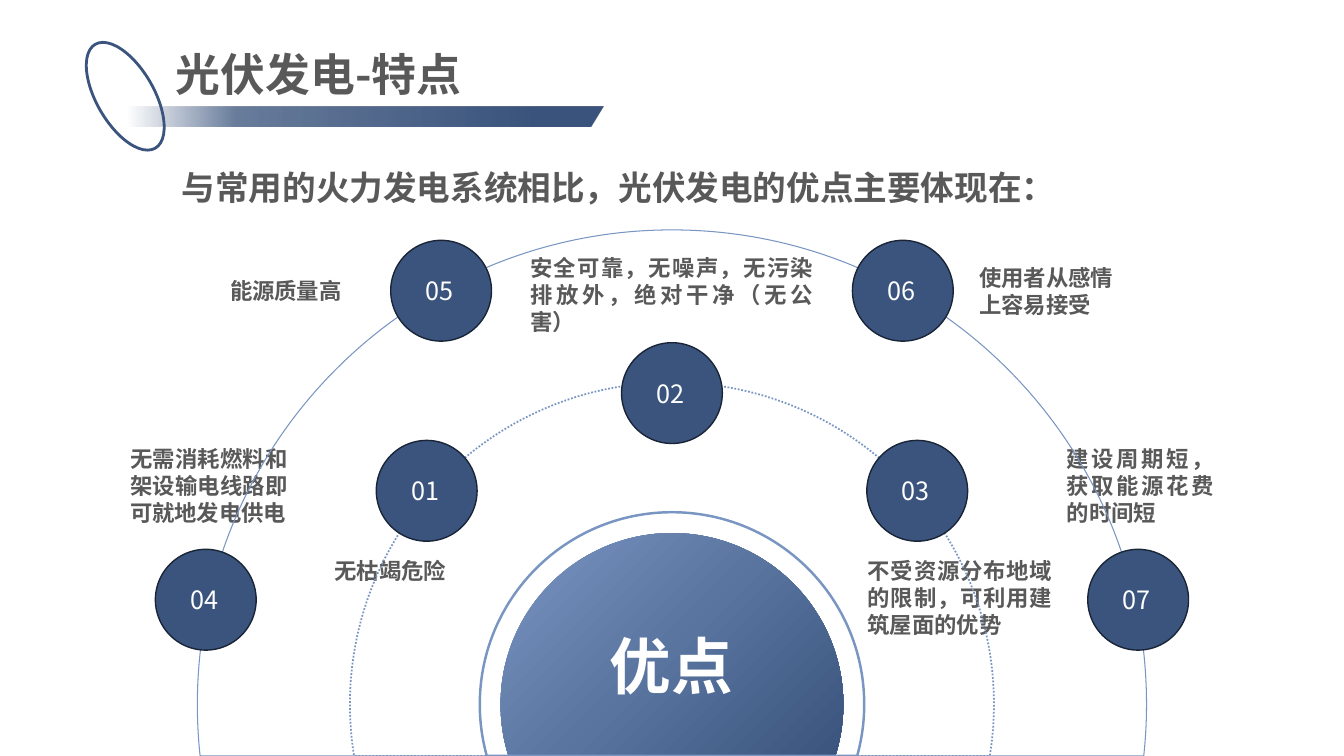
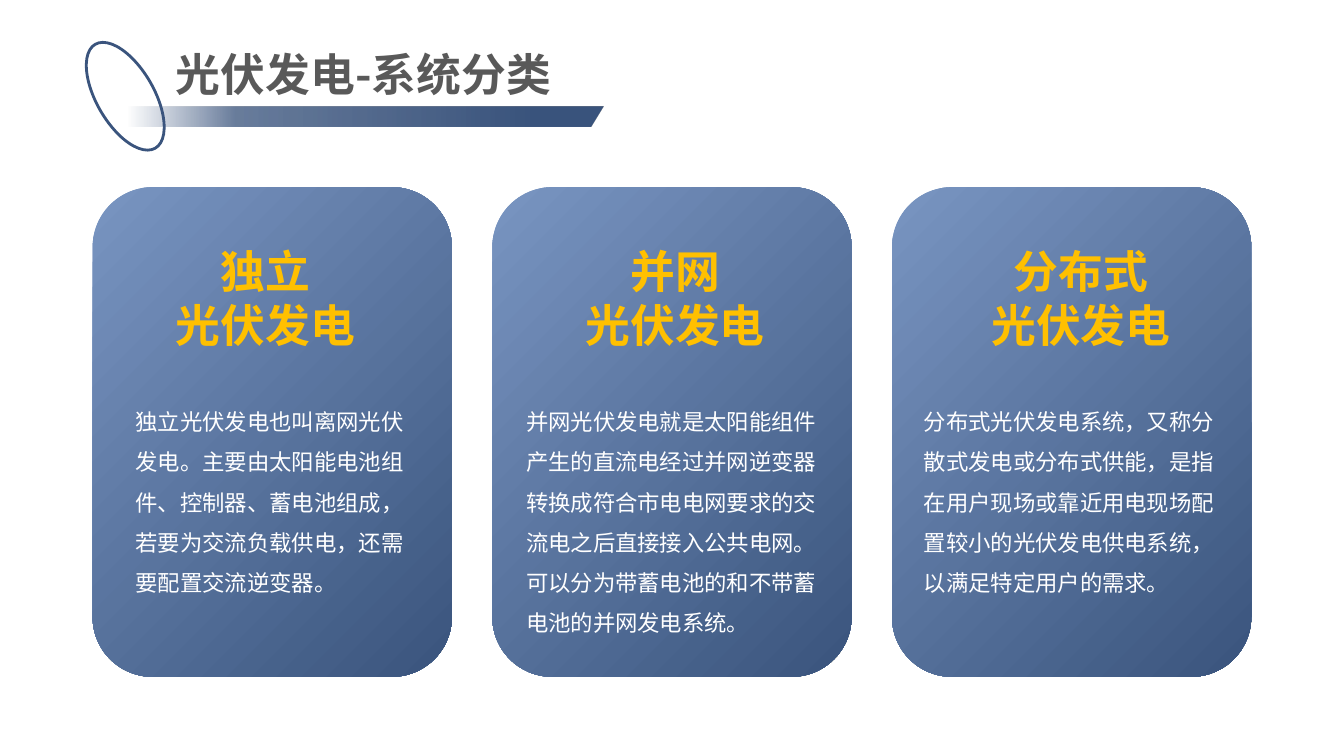
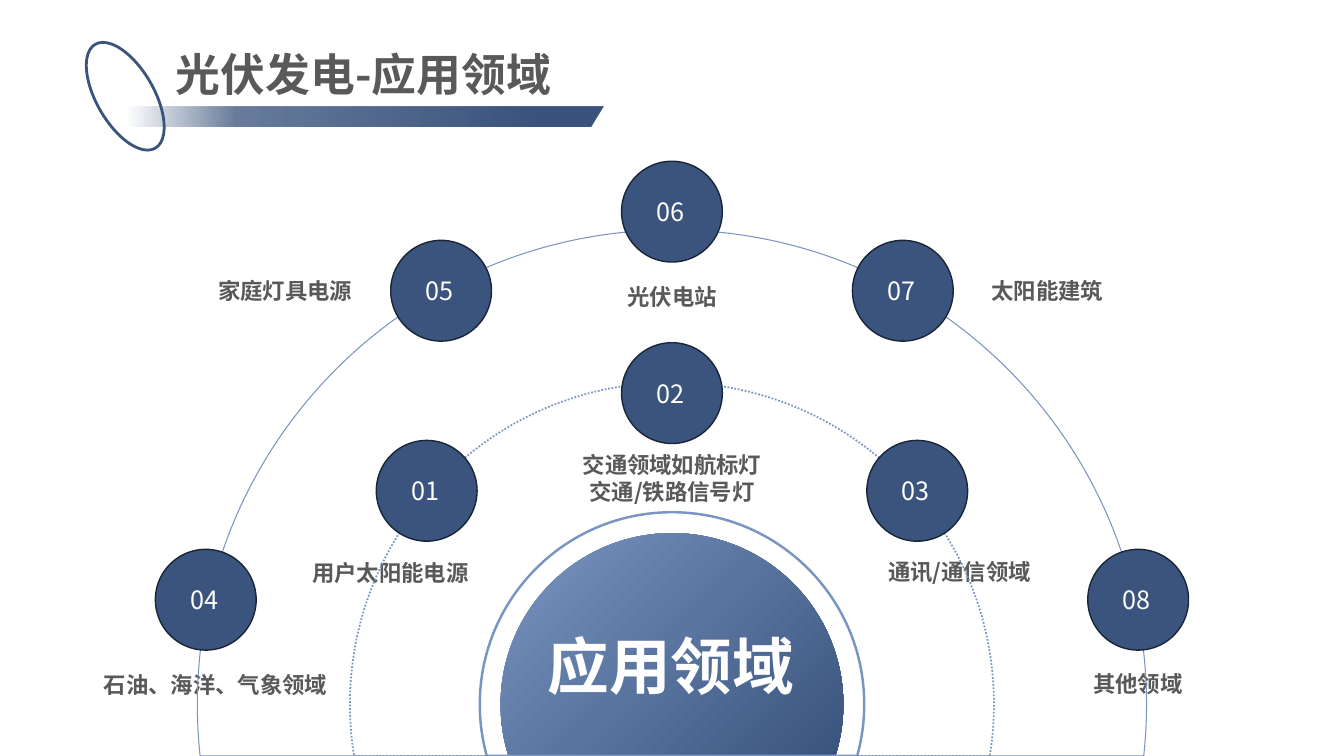
from dataclasses import dataclass
from math import asin, cos, pi, sin, tan
from typing import Optional

from lxml import etree
from pptx import Presentation
from pptx import util as u
from pptx.dml.color import RGBColor
from pptx.enum import dml, lang, shapes, text
from pptx.oxml.ns import qn

WIDTH, HEIGHT = 960, 540
CENTER_X, CENTER_Y = 480, 503.2
NAVY, SKY, EDGE = "3A547D", "7995C1", "192537"
GRAY, WHITE, GOLD = "595959", "FFFFFF", "FFC000"
SANS, HEADING = "Noto Sans CJK SC", "Noto Sans CJK JP"
LEFT, CENTERED, RIGHT, JUSTIFIED = (
    text.PP_ALIGN.LEFT, text.PP_ALIGN.CENTER, text.PP_ALIGN.RIGHT, text.PP_ALIGN.JUSTIFY)
BADGE = 72


@dataclass(frozen=True)
class Box:
    left: float
    top: float
    width: float
    height: float

    def lengths(self) -> list:
        return [u.Pt(v) for v in (self.left, self.top, self.width, self.height)]


@dataclass(frozen=True)
class Style:
    size: float
    color: str = GRAY
    bold: bool = True
    font: str = SANS
    align: text.PP_ALIGN = LEFT
    spacing: Optional[float] = None
    wrap: bool = False
    middle: bool = False
    inset: bool = True


@dataclass(frozen=True)
class Stop:
    position: int
    color: str
    opacity: int = 100


@dataclass(frozen=True)
class Ring:
    radius: float
    line_width: float
    dash: Optional[dml.MSO_LINE] = None


@dataclass(frozen=True)
class Label:
    words: str
    box: Box
    align: text.PP_ALIGN = CENTERED
    wrap: bool = False


@dataclass(frozen=True)
class Card:
    heading: str
    heading_left: float
    body: str
    body_box: Box


@dataclass(frozen=True)
class Dome:
    topic: str
    topic_box: Box
    badges: list
    labels: list


TITLE = Style(32, font=HEADING, wrap=True)
LEAD = Style(24, align=CENTERED, spacing=1.2, wrap=True)
NUMBER = Style(18, WHITE, bold=False)
TOPIC = Style(44, WHITE)
CARD_HEADING = Style(32, GOLD, font=HEADING, align=CENTERED)
CARD_BODY = Style(16, WHITE, bold=False, spacing=1.5, wrap=True, inset=False)

DIAGONAL = [Stop(0, SKY), Stop(100, NAVY)]
FADE_IN = [Stop(7, NAVY, 0), Stop(28, NAVY, 76), Stop(87, NAVY)]
RINGS = [Ring(137.3, 1.75), Ring(230, 1.25, dml.MSO_LINE.ROUND_DOT), Ring(339, 0.75)]

INNER_BADGES = [(-175.2, 314.6), (0, 244.8), (175.2, 314.6)]
OUTER_LEFT = [(-333, 392.4), (-164.9, 171.7)]
OUTER_TOP = [(0, 115.2)]
OUTER_RIGHT = [(164.9, 171.7), (333, 392.4)]

ADVANTAGES = Dome(
    "优点", Box(428.4, 445, 103.7, 60.5),
    INNER_BADGES + OUTER_LEFT + OUTER_RIGHT,
    [
        Label("安全可靠，无噪声，无污染排放外，绝对干净（无公害）", Box(371.5, 187.2, 216.7, 46.1), JUSTIFIED, True),
        Label("不受资源分布地域的限制，可利用建筑屋面的优势", Box(612.7, 394.3, 146.2, 65.5), JUSTIFIED, True),
        Label("无枯竭危险", Box(231.8, 394.6, 95, 26.6), LEFT),
        Label("建设周期短，获取能源花费的时间短", Box(754.9, 314.3, 119.5, 65.5), JUSTIFIED, True),
        Label("无需消耗燃料和架设输电线路即可就地发电供电", Box(85.8, 314.3, 126.9, 65.5), JUSTIFIED, True),
        Label("使用者从感情\n上容易接受", Box(692.4, 184.6, 111.6, 46.1), JUSTIFIED),
        Label("能源质量高", Box(156.2, 194.4, 95, 26.6), RIGHT),
    ])

APPLICATIONS = Dome(
    "应用领域", Box(384.1, 445, 192.2, 60.5),
    INNER_BADGES + OUTER_LEFT + OUTER_TOP + OUTER_RIGHT,
    [
        Label("家庭灯具电源", Box(148, 194.4, 111.6, 26.6)),
        Label("光伏电站", Box(440.6, 198.7, 79.2, 26.6)),
        Label("太阳能建筑", Box(700.6, 194.4, 95, 26.6)),
        Label("其他领域", Box(773.3, 475.2, 79.2, 26.6)),
        Label("交通领域如航标灯交通/铁路信号灯", Box(401.2, 318.6, 157.7, 46.1), wrap=True),
        Label("用户太阳能电源", Box(215.3, 395.6, 127.4, 26.6)),
        Label("通讯/通信领域", Box(625.7, 395.3, 119.5, 26.6)),
        Label("石油、海洋、气象领域", Box(65.8, 475.9, 176.4, 26.6)),
    ])

CARDS = [
    Card("独立\n光伏发电", 118.4,
         "独立光伏发电也叫离网光伏发电。主要由太阳能电池组件、控制器、蓄电池组成，若要为交流负载供电，还需要配置交流逆变器。",
         Box(96.9, 282, 194.4, 142.6)),
    Card("并网\n光伏发电", 411,
         "并网光伏发电就是太阳能组件产生的直流电经过并网逆变器转换成符合市电电网要求的交流电之后直接接入公共电网。可以分为带蓄电池的和不带蓄电池的并网发电系统。",
         Box(375.8, 282, 213.1, 171.4)),
    Card("分布式\n光伏发电", 700.9,
         "分布式光伏发电系统，又称分散式发电或分布式供能，是指在用户现场或靠近用电现场配置较小的光伏发电供电系统，以满足特定用户的需求。",
         Box(659.9, 282, 211, 142.6)),
]


def rgb(color: str) -> RGBColor:
    return RGBColor.from_string(color)


def add_text(parent, words: str, box: Box, style: Style) -> None:
    frame = parent.add_textbox(*box.lengths()).text_frame
    frame.word_wrap = style.wrap
    frame.auto_size = text.MSO_AUTO_SIZE.SHAPE_TO_FIT_TEXT
    if style.middle:
        frame.vertical_anchor = text.MSO_ANCHOR.MIDDLE
    if not style.inset:
        frame.margin_left = frame.margin_top = frame.margin_right = frame.margin_bottom = u.Pt(0)
    frame.text = words
    for paragraph in frame.paragraphs:
        paragraph.alignment = style.align
        if style.spacing:
            paragraph.line_spacing = style.spacing
        font = paragraph.font
        font.size, font.bold, font.name = u.Pt(style.size), style.bold, style.font
        font.color.rgb = rgb(style.color)
        font.language_id = lang.MSO_LANGUAGE_ID.SIMPLIFIED_CHINESE
        defaults = paragraph._p.pPr.find(qn("a:defRPr"))
        etree.SubElement(defaults, qn("a:ea")).set("typeface", style.font)


def fill_gradient(shape, stops: list, angle: int) -> None:
    shape.fill.gradient()
    gradient = shape._element.spPr.find(qn("a:gradFill"))
    stop_list = gradient.find(qn("a:gsLst"))
    for old_stop in list(stop_list):
        stop_list.remove(old_stop)
    for stop in stops:
        mark = etree.SubElement(stop_list, qn("a:gs"), pos=str(stop.position * 1000))
        color = etree.SubElement(mark, qn("a:srgbClr"), val=stop.color)
        if stop.opacity < 100:
            etree.SubElement(color, qn("a:alpha"), val=str(stop.opacity * 1000))
    gradient.find(qn("a:lin")).set("ang", str(angle * 60000))


def outline(shape, color: Optional[str] = None, width: float = 0) -> None:
    shape.shadow.inherit = False
    if color is None:
        shape.line.fill.background()
    else:
        shape.line.color.rgb = rgb(color)
        shape.line.width = u.Pt(width)


def add_header(slide, title: str) -> None:
    add_text(slide.shapes, title, Box(118.4, 30.2, 430.6, 46.1), TITLE)
    band = slide.shapes.add_shape(shapes.MSO_SHAPE.PARALLELOGRAM, *Box(66.2, 76, 365, 14.2).lengths())
    band.adjustments[0] = 0.64
    fill_gradient(band, FADE_IN, 0)
    outline(band)
    loop = slide.shapes.add_shape(shapes.MSO_SHAPE.OVAL, *Box(69, 25.9, 41, 85.7).lengths())
    loop.rotation = 330
    loop.fill.background()
    outline(loop, NAVY, 2)


def rim_point(radius: float, angle: float, reach: float = 0) -> tuple:
    x = CENTER_X + radius * (cos(angle) - reach * sin(angle))
    y = CENTER_Y - radius * (sin(angle) + reach * cos(angle))
    return u.Pt(x), u.Pt(y)


def arc_points(radius: float, start: float, end: float) -> list:
    reach = 4 / 3 * tan((end - start) / 4)
    return [rim_point(radius, start, reach), rim_point(radius, end, -reach), rim_point(radius, end)]


def add_clipped_circle(slide, radius: float):
    dip = asin((HEIGHT - CENTER_Y) / radius)
    right_side = arc_points(radius, pi / 2, 0) + arc_points(radius, 0, -dip)
    left_side = arc_points(radius, pi + dip, pi) + arc_points(radius, pi, pi / 2)
    builder = slide.shapes.build_freeform(*rim_point(radius, pi / 2))
    builder.add_line_segments(right_side + [rim_point(radius, pi + dip)] + left_side, close=True)
    circle = builder.convert_to_shape()
    segments = list(circle._element.iter(qn("a:lnTo")))
    for first in (0, 3, 7, 10):
        curve = etree.Element(qn("a:cubicBezTo"))
        segments[first].addprevious(curve)
        for segment in segments[first:first + 3]:
            curve.append(segment[0])
            segment.getparent().remove(segment)
    return circle


def add_badge(slide, number: int, offset: float, top: float) -> None:
    left = CENTER_X + offset - BADGE / 2
    badge = slide.shapes.add_group_shape().shapes
    disc = badge.add_shape(shapes.MSO_SHAPE.OVAL, *Box(left, top, BADGE, BADGE).lengths())
    disc.fill.solid()
    disc.fill.fore_color.rgb = rgb(NAVY)
    outline(disc, EDGE, 1)
    add_text(badge, f"{number:02d}", Box(left + 18, top + 21.6, 36, 28.8), NUMBER)


def add_dome(slide, dome: Dome) -> None:
    for label in dome.labels:
        style = Style(16, align=label.align, wrap=label.wrap, middle=True)
        add_text(slide.shapes, label.words, label.box, style)
    core = add_clipped_circle(slide, 122.4)
    fill_gradient(core, DIAGONAL, 45)
    outline(core)
    for ring in RINGS:
        arc = add_clipped_circle(slide, ring.radius)
        arc.fill.background()
        outline(arc, SKY, ring.line_width)
        if ring.dash is not None:
            arc.line.dash_style = ring.dash
    for number, (offset, top) in enumerate(dome.badges, 1):
        add_badge(slide, number, offset, top)
    add_text(slide.shapes, dome.topic, dome.topic_box, TOPIC)


def add_cards(slide) -> None:
    for i, card in enumerate(CARDS):
        panel_box = Box(66.2 + 285.5 * i, 133.7, 256.6, 349.7)
        panel = slide.shapes.add_shape(shapes.MSO_SHAPE.ROUNDED_RECTANGLE, *panel_box.lengths())
        fill_gradient(panel, DIAGONAL, 45)
        outline(panel)
    for card in CARDS:
        add_text(slide.shapes, card.body, card.body_box, CARD_BODY)
        add_text(slide.shapes, card.heading, Box(card.heading_left, 170.6, 142.6, 85), CARD_HEADING)


def main() -> None:
    deck = Presentation()
    deck.slide_width, deck.slide_height = u.Pt(WIDTH), u.Pt(HEIGHT)
    blank = deck.slide_layouts[6]

    features = deck.slides.add_slide(blank)
    add_header(features, "光伏发电-特点")
    add_text(features.shapes, "与常用的火力发电系统相比，光伏发电的优点主要体现在：",
             Box(92.9, 109.8, 697.7, 39.6), LEAD)
    add_dome(features, ADVANTAGES)

    categories = deck.slides.add_slide(blank)
    add_header(categories, "光伏发电-系统分类")
    add_cards(categories)

    fields = deck.slides.add_slide(blank)
    add_header(fields, "光伏发电-应用领域")
    add_dome(fields, APPLICATIONS)

    deck.save("out.pptx")


if __name__ == "__main__":
    main()
